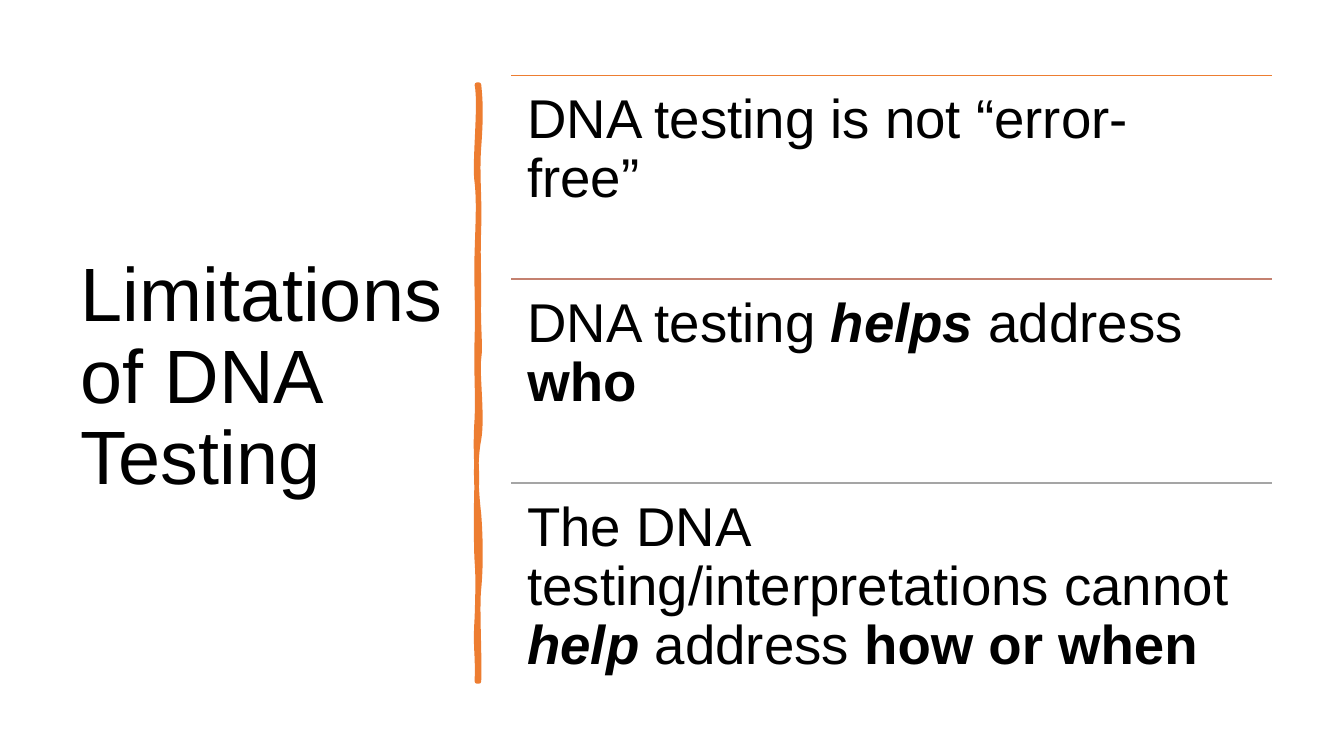
from pptx import Presentation, util as u
from pptx.dml.color import RGBColor
from pptx.enum import shapes as sh, text as tx
from pptx.oxml.ns import qn
from lxml import etree

ORANGE, BLACK = "ED7D31", "000000"
POINTS = [
    ("ED7D31", [("DNA testing is not “error-free”", "")]),
    ("C48170", [("DNA testing ", ""), ("helps", "bi"), (" address ", ""), ("who", "b")]),
    ("A5A5A5", [("The DNA testing/interpretations cannot ", ""), ("help ", "bi"),
                ("address ", ""), ("how or when", "b")]),
]
# Each curve of the bar: control x, y, control x, y, end x, y
BAR = [
    (4.77, 1.02, 4.77, 1.19, 4.75, 1.46), (4.73, 1.73, 4.76, 1.95, 4.75, 2.26),
    (4.74, 2.57, 4.75, 2.62, 4.75, 2.94), (4.74, 3.25, 4.77, 3.42, 4.75, 3.56),
    (4.73, 3.7, 4.79, 4.14, 4.75, 4.36), (4.71, 4.57, 4.72, 4.84, 4.75, 5.1),
    (4.77, 5.36, 4.77, 5.64, 4.75, 5.84), (4.73, 6.03, 4.76, 6.5, 4.75, 6.76),
    (4.74, 6.76, 4.73, 6.76, 4.73, 6.76), (4.74, 6.46, 4.71, 6.44, 4.73, 6.13),
    (4.74, 5.83, 4.74, 5.7, 4.73, 5.57), (4.72, 5.44, 4.72, 4.95, 4.73, 4.77),
    (4.73, 4.59, 4.71, 4.45, 4.73, 4.15), (4.74, 3.86, 4.72, 3.73, 4.73, 3.35),
    (4.74, 2.98, 4.72, 2.81, 4.73, 2.5), (4.74, 2.18, 4.75, 2, 4.73, 1.81),
    (4.7, 1.63, 4.77, 1.04, 4.73, 0.84),
]


def color(code):
    return RGBColor.from_string(code)


def assign(item, values):
    for name, value in values.items():
        setattr(item, name, value)


def write(frame, runs, size):
    """Fill the frame with one left-aligned paragraph of (words, style) runs."""
    para = frame.paragraphs[0]
    assign(para, {"line_spacing": 0.9, "alignment": tx.PP_ALIGN.LEFT})
    for words, style in runs:
        run = para.add_run()
        run.text = words
        assign(run.font, {"name": "Arial", "size": u.Pt(size),
                          "bold": "b" in style, "italic": "i" in style})
        run.font.color.rgb = color(BLACK)


def add_title(slide, left, top, width, height):
    title = slide.shapes.title
    assign(title, {"left": u.Inches(left), "top": u.Inches(top),
                   "width": u.Inches(width), "height": u.Inches(height)})
    assign(title.text_frame, {"word_wrap": True, "auto_size": tx.MSO_AUTO_SIZE.NONE,
                              "vertical_anchor": tx.MSO_ANCHOR.MIDDLE})
    write(title.text_frame, [("Limitations of DNA Testing", "")], 54)


def bend(shape, curves):
    """Turn the straight segments of a freeform into cubic curves."""
    lines = list(shape._element.iter(qn("a:lnTo")))
    for line, (ax, ay, bx, by, _, _) in zip(lines, curves):
        line.tag = qn("a:cubicBezTo")
        for i, (x, y) in enumerate([(ax, ay), (bx, by)]):
            dot = etree.Element(qn("a:pt"), x=str(u.Inches(x) - shape.left),
                                y=str(u.Inches(y) - shape.top))
            line.insert(i, dot)


def add_bar(slide, left, top):
    pen = slide.shapes.build_freeform(u.Inches(left), u.Inches(top))
    pen.add_line_segments([(u.Inches(c[4]), u.Inches(c[5])) for c in BAR], close=True)
    bar = pen.convert_to_shape()
    bend(bar, BAR)
    bar.shadow.inherit = False
    bar.fill.solid()
    bar.fill.fore_color.rgb = color(ORANGE)
    bar.line.color.rgb = color(ORANGE)
    bar.line.width = u.Pt(3.25)


def add_rule(slide, left, top, width, shade):
    y = u.Inches(top)
    rule = slide.shapes.add_connector(sh.MSO_CONNECTOR.STRAIGHT, u.Inches(left), y,
                                      u.Inches(left + width), y)
    rule.line.color.rgb = color(shade)
    rule.line.width = u.Pt(1)
    etree.SubElement(rule._element.spPr, qn("a:effectLst"))


def add_points(slide, left, top, width, height):
    row = height / len(POINTS)
    pad = u.Inches(0.16)
    for i, (shade, runs) in enumerate(POINTS):
        y = top + i * row
        add_rule(slide, left, y, width, shade)
        box = slide.shapes.add_textbox(u.Inches(left), u.Inches(y),
                                       u.Inches(width), u.Inches(row))
        assign(box.text_frame, {"word_wrap": True, "margin_left": pad, "margin_top": pad,
                                "margin_right": u.Inches(0.38), "margin_bottom": pad})
        write(box.text_frame, runs, 39)


def main():
    deck = Presentation()
    assign(deck, {"slide_width": u.Inches(13.33), "slide_height": u.Inches(7.5)})
    slide = deck.slides.add_slide(deck.slide_layouts.get_by_name("Title Only"))
    add_title(slide, 0.7, 0.7, 3.84, 6.11)
    add_bar(slide, 4.75, 0.84)
    add_points(slide, 5.07, 0.75, 7.55, 6.06)
    deck.save("out.pptx")


if __name__ == "__main__":
    main()
